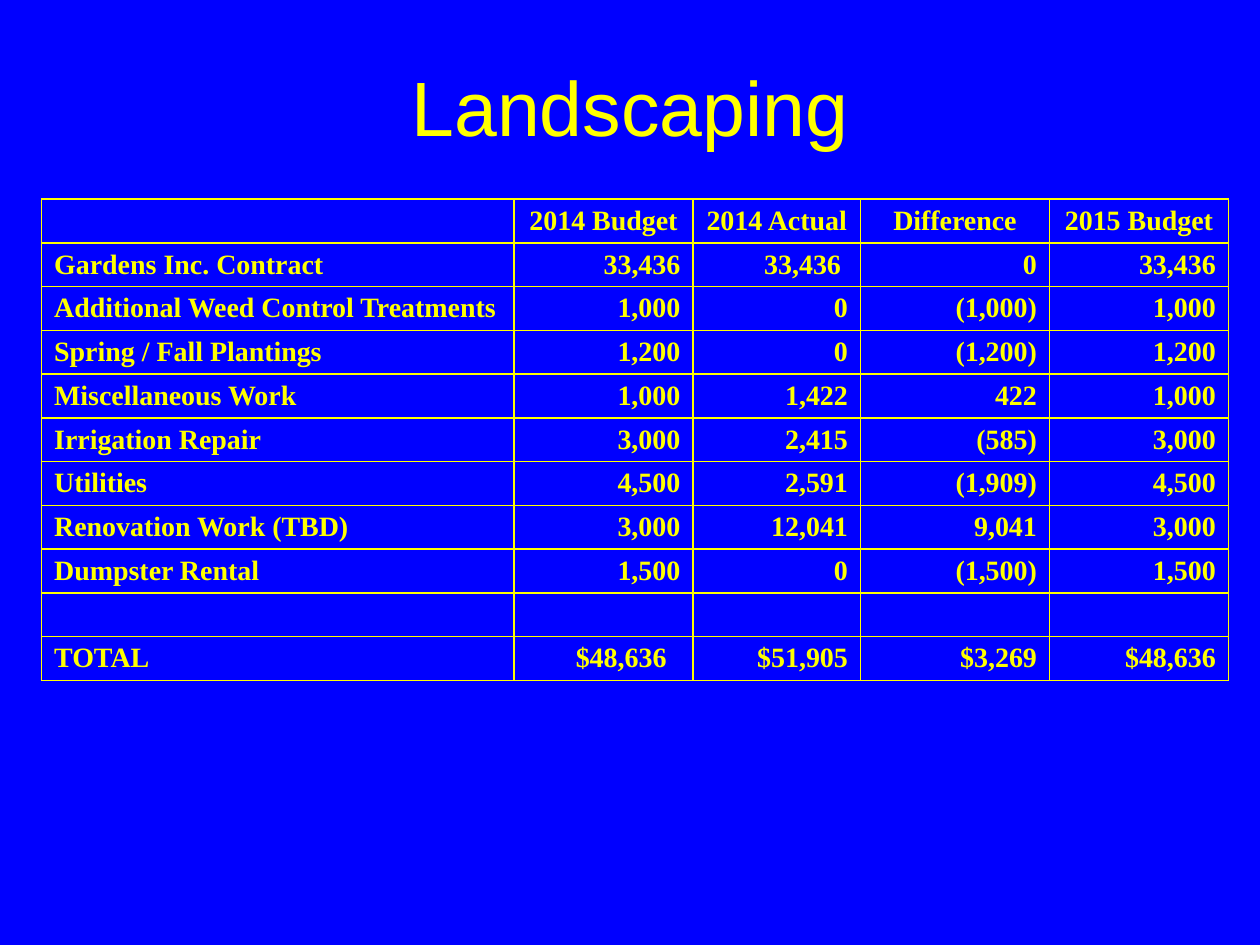
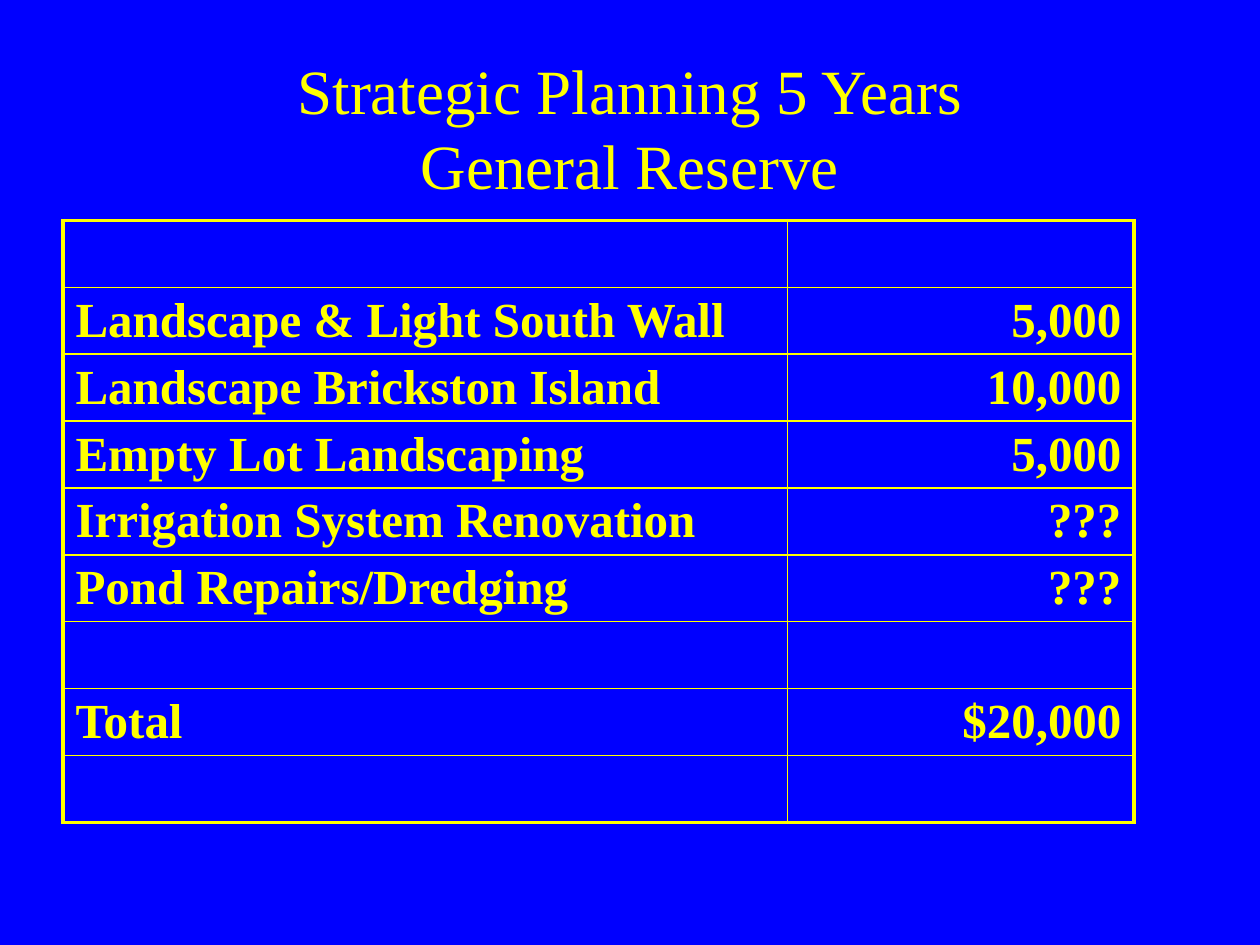
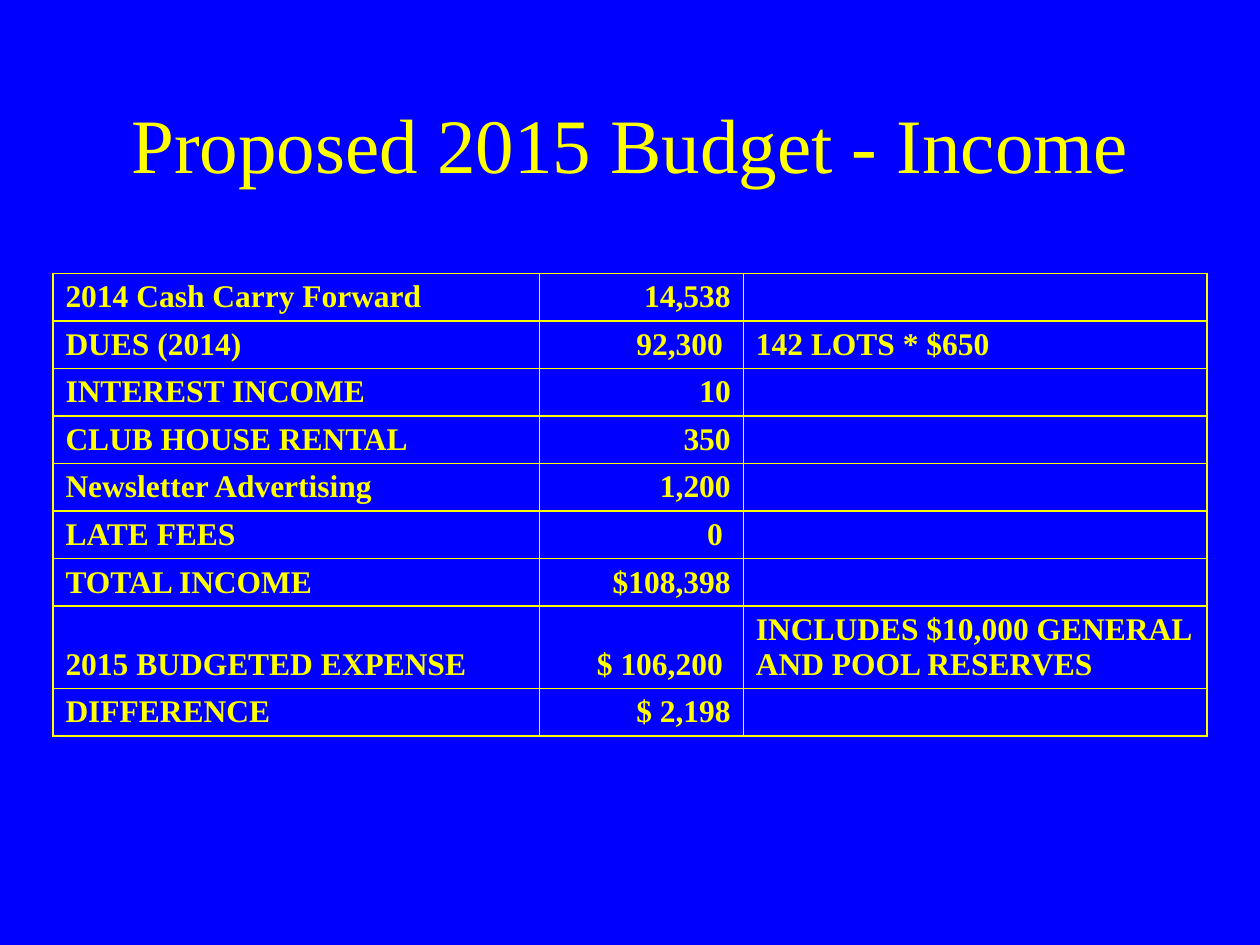
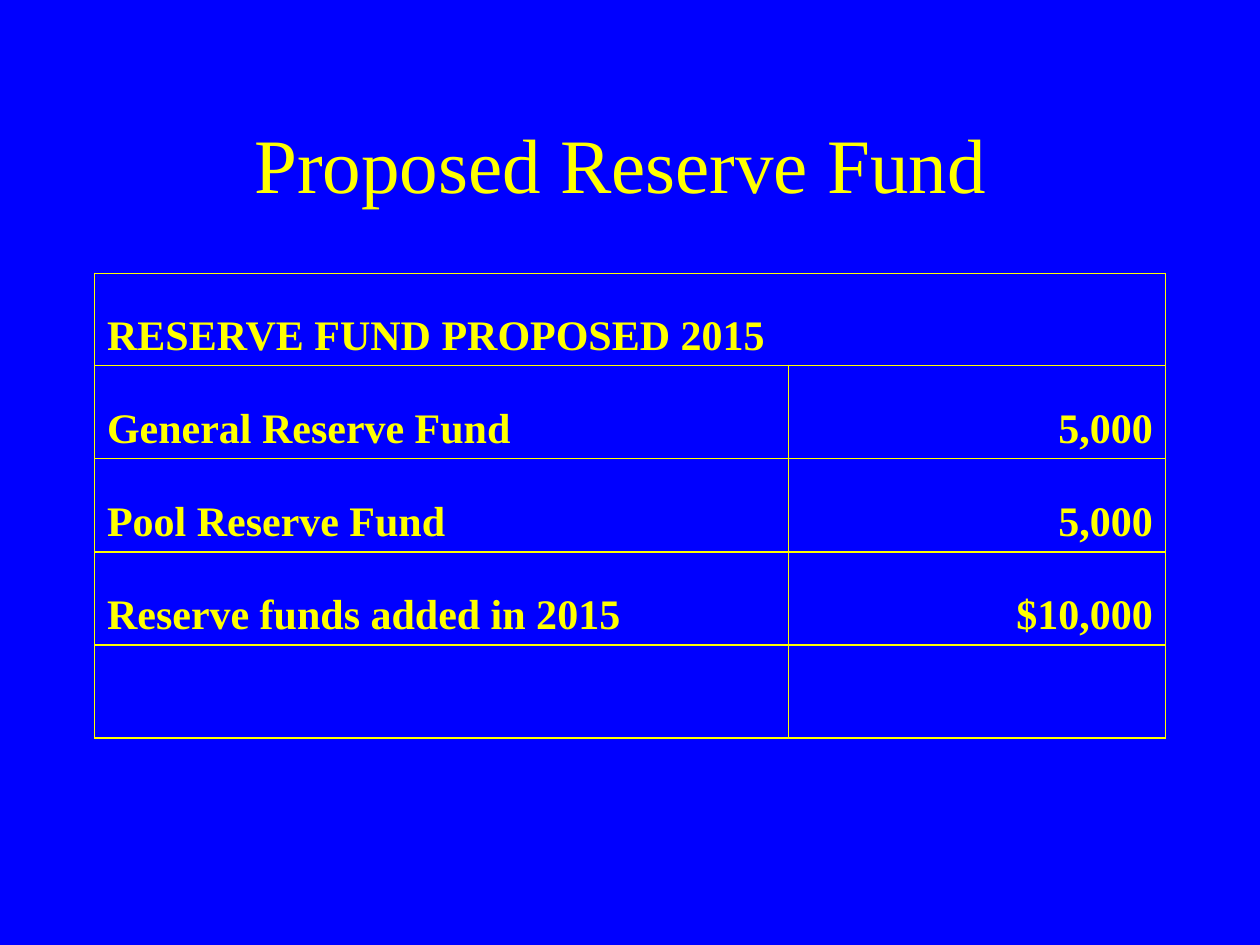
from dataclasses import dataclass

from lxml import etree
from pptx import Presentation
from pptx.dml.color import RGBColor
from pptx.enum import text
from pptx.oxml.ns import qn
from pptx.util import Inches, Pt


@dataclass(frozen=True)
class Theme:
    background: str = "0000FF"
    ink: str = "FFFF00"
    serif: str = "Times New Roman"
    sans: str = "Arial"
    title: int = 44
    long_title: int = 36
    thin: float = 1
    thick: float = 2.25


THEME = Theme()
ALIGN = {"l": text.PP_ALIGN.LEFT, "c": text.PP_ALIGN.CENTER, "r": text.PP_ALIGN.RIGHT}
BOTTOM, TOP = text.MSO_ANCHOR.BOTTOM, text.MSO_ANCHOR.TOP


def set_font(font, **values):
    font.color.rgb = RGBColor.from_string(THEME.ink)
    for name, value in values.items():
        setattr(font, name, value)


def draw_border(cell, side, width):
    """Side is L, R, T or B; sides must be drawn in that order, before the fill."""
    line = etree.SubElement(cell._tc.get_or_add_tcPr(), qn(f"a:ln{side}"), w=str(Pt(width)))
    fill = etree.SubElement(line, qn("a:solidFill"))
    etree.SubElement(fill, qn("a:srgbClr"), val=THEME.ink)


# Row heights are one number for even rows, with exceptions in "heights".
# "align" has one letter per column; "header" is the alignment of a header row.
SLIDES = [
    {
        "title": "Landscaping", "title_font": THEME.sans, "title_size": THEME.title,
        "title_at": (0.75, 0.42, 8.5, 0.83),
        "table_at": (0.33, 1.58), "columns": (3.75, 1.42, 1.33, 1.5, 1.42), "row": 0.34,
        "size": 16, "align": "lrrrr", "header": "c", "anchor": BOTTOM, "frame": THEME.thin,
        "insets": {(10, 1): 0.21},
        "rows": [
            ("", "2014 Budget", "2014 Actual", "Difference", "2015 Budget"),
            ("Gardens Inc. Contract", "33,436", "33,436 ", "0", "33,436"),
            ("Additional Weed Control Treatments", "1,000", "0", "(1,000)", "1,000"),
            ("Spring / Fall Plantings", "1,200", "0", "(1,200)", "1,200"),
            ("Miscellaneous Work", "1,000", "1,422", "422", "1,000"),
            ("Irrigation Repair", "3,000", "2,415", "(585)", "3,000"),
            ("Utilities", "4,500", "2,591", "(1,909)", "4,500"),
            ("Renovation Work (TBD)", "3,000", "12,041", "9,041", "3,000"),
            ("Dumpster Rental", "1,500", "0", "(1,500)", "1,500"),
            ("", "", "", "", ""),
            ("TOTAL", "$48,636", "$51,905", "$3,269", "$48,636"),
        ],
    },
    {
        "title": "Strategic Planning 5 Years\vGeneral Reserve",
        "title_font": THEME.serif, "title_size": THEME.long_title,
        "title_at": (0.75, 0.42, 8.5, 1.17),
        "table_at": (0.5, 1.75), "columns": (5.75, 2.75), "row": 0.53,
        "size": 28, "align": "lr", "anchor": TOP, "frame": THEME.thick,
        "rows": [
            ("", ""),
            ("Landscape & Light South Wall", "5,000"),
            ("Landscape Brickston Island", "10,000"),
            ("Empty Lot Landscaping", "5,000"),
            ("Irrigation System Renovation", "???"),
            ("Pond Repairs/Dredging", "???"),
            ("", ""),
            ("Total", "$20,000"),
            ("", ""),
        ],
    },
    {
        "title": "Proposed 2015 Budget - Income",
        "title_font": THEME.serif, "title_size": THEME.title,
        "title_at": (0.75, 0.67, 8.5, 0.92),
        "table_at": (0.42, 2.17), "columns": (3.86, 1.62, 3.68), "row": 0.37, "heights": {7: 0.65},
        "size": 18, "align": "lrl", "anchor": BOTTOM, "frame": THEME.thin,
        "rows": [
            ("2014 Cash Carry Forward", "14,538", ""),
            ("DUES (2014)", "92,300 ", "142 LOTS * $650"),
            ("INTEREST INCOME", "10", ""),
            ("CLUB HOUSE RENTAL", "350", ""),
            ("Newsletter Advertising", "1,200", ""),
            ("LATE FEES", "0 ", ""),
            ("TOTAL INCOME", "$108,398", ""),
            ("2015 BUDGETED EXPENSE", "$ 106,200 ", "INCLUDES $10,000 GENERAL AND POOL RESERVES"),
            ("DIFFERENCE", "$ 2,198", ""),
        ],
    },
    {
        "title": "Proposed Reserve Fund ",
        "title_font": THEME.serif, "title_size": THEME.title,
        "title_at": (0.75, 0.67, 8.5, 1.25),
        "table_at": (0.75, 2.17), "columns": (5.51, 2.99), "row": 0.74, "heights": {0: 0.73},
        "size": 24, "align": "lr", "anchor": BOTTOM, "frame": THEME.thin, "merge_first": True,
        "rows": [
            ("RESERVE FUND PROPOSED 2015", ""),
            ("General Reserve Fund", "5,000"),
            ("Pool Reserve Fund", "5,000"),
            ("Reserve funds added in 2015", "$10,000"),
            ("", ""),
        ],
    },
]

deck = Presentation()
deck.slide_width, deck.slide_height = Inches(10), Inches(7.5)
backdrop = deck.slide_master.background.fill
backdrop.solid()
backdrop.fore_color.rgb = RGBColor.from_string(THEME.background)
title_only = deck.slide_layouts[5]

for content in SLIDES:
    page = deck.slides.add_slide(title_only)

    title = page.shapes.title
    title.left, title.top, title.width, title.height = map(Inches, content["title_at"])
    title.text_frame.text = content["title"]
    title.text_frame.vertical_anchor = text.MSO_ANCHOR.MIDDLE
    heading = title.text_frame.paragraphs[0]
    heading.alignment = text.PP_ALIGN.CENTER
    for span in heading.runs:
        set_font(span.font, name=content["title_font"], size=Pt(content["title_size"]))

    rows, columns = content["rows"], content["columns"]
    heights = [content.get("heights", {}).get(index, content["row"]) for index in range(len(rows))]
    left, top = content["table_at"]
    table = page.shapes.add_table(
        len(rows), len(columns), Inches(left), Inches(top),
        Inches(sum(columns)), Inches(sum(heights))).table
    table.first_row = table.horz_banding = False
    for column, width in zip(table.columns, columns):
        column.width = Inches(width)
    for row, height in zip(table.rows, heights):
        row.height = Inches(height)

    last_row, last_column = len(rows) - 1, len(columns) - 1
    for r, values in enumerate(rows):
        aligns = content["align"]
        if r == 0 and "header" in content:
            aligns = content["header"] * len(columns)
        for c, value in enumerate(values):
            cell = table.cell(r, c)
            outer = {"L": c == 0, "R": c == last_column, "T": r == 0, "B": r == last_row}
            for side, on_frame in outer.items():
                draw_border(cell, side, content["frame"] if on_frame else THEME.thin)
            cell.fill.background()
            cell.vertical_anchor = content["anchor"]
            cell.margin_right = Inches(content.get("insets", {}).get((r, c), 0.1))
            para = cell.text_frame.paragraphs[0]
            para.alignment = ALIGN[aligns[c]]
            if value:
                span = para.add_run()
                span.text = value
                set_font(span.font, name=THEME.serif, size=Pt(content["size"]), bold=True)
            else:
                # An empty cell keeps the table's font, so its row does not grow.
                mark = etree.SubElement(para._p, qn("a:endParaRPr"), sz=str(content["size"] * 100))
                etree.SubElement(mark, qn("a:latin"), typeface=THEME.serif)
    if content.get("merge_first"):
        table.cell(0, 0).merge(table.cell(0, last_column))

deck.save("out.pptx")
